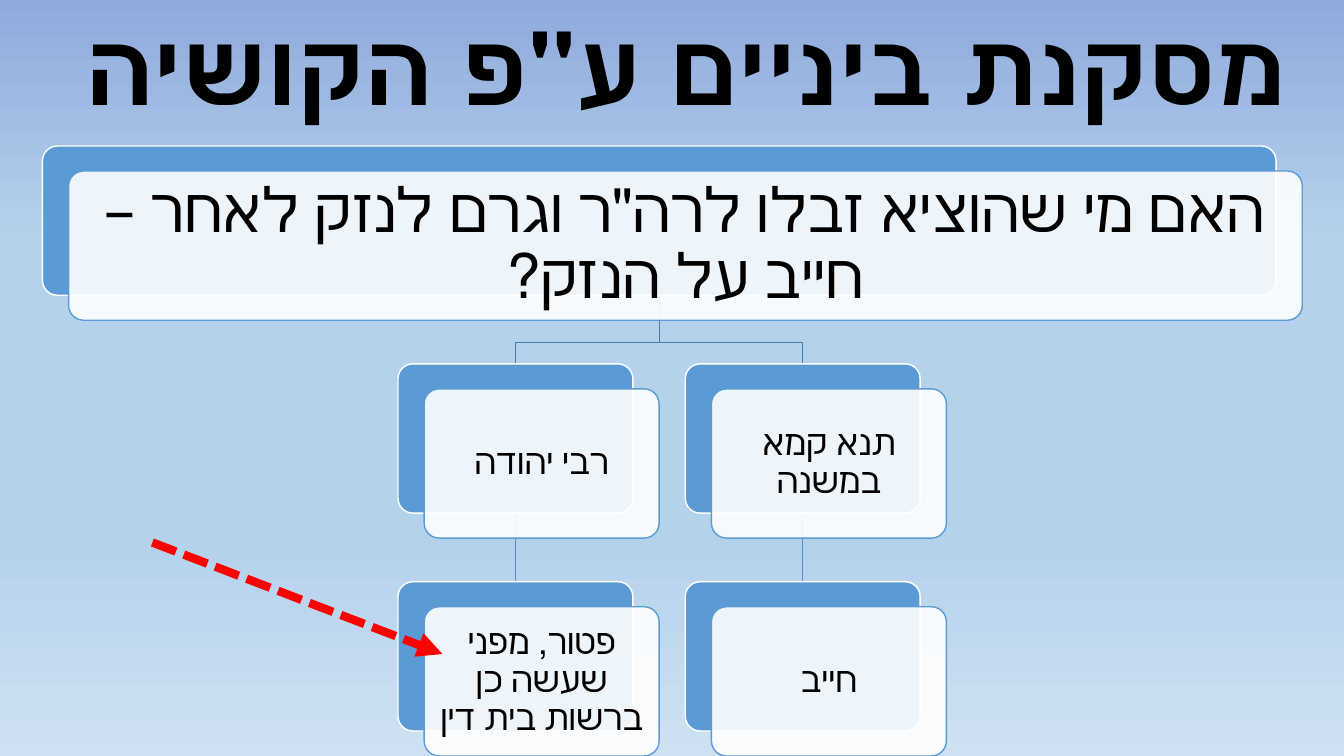
from lxml import etree
from pptx import Presentation
from pptx.dml.color import RGBColor
from pptx.enum.dml import MSO_LINE
from pptx.enum.shapes import MSO_CONNECTOR, MSO_SHAPE
from pptx.enum.text import MSO_ANCHOR, PP_ALIGN
from pptx.oxml.ns import qn
from pptx.util import Cm, Pt

ROUNDED = MSO_SHAPE.ROUNDED_RECTANGLE
STRAIGHT = MSO_CONNECTOR.STRAIGHT
DASHED = MSO_LINE.SQUARE_DOT
MIDDLE = MSO_ANCHOR.MIDDLE
CENTER = PP_ALIGN.CENTER

BLACK = RGBColor(0x00, 0x00, 0x00)
WHITE = RGBColor(0xFF, 0xFF, 0xFF)
BLUE = RGBColor(0x5B, 0x9B, 0xD5)
TRUNK_BLUE = RGBColor(0x49, 0x7C, 0xAB)
BRANCH_BLUE = RGBColor(0x53, 0x8D, 0xC1)
RED = RGBColor(0xFF, 0x00, 0x00)
SKY = [(0, RGBColor(0x8F, 0xAA, 0xDC)), (32, RGBColor(0xB5, 0xD2, 0xEC)),
       (72, RGBColor(0xB5, 0xD2, 0xEC)), (100, RGBColor(0xCE, 0xE1, 0xF2))]

# Tree geometry in centimetres
SLIDE_W, SLIDE_H = 33.87, 19.05
TREE_TOP, ROW_STEP, CARD_H = 3.68, 5.49, 3.76
ROOT_LEFT, ROOT_W = 1.07, 31.09
COLUMN_LEFT, COLUMN_STEP, CARD_W = 10.03, 7.24, 5.92
SHIFT_X, SHIFT_Y = 0.66, 0.63
ELBOW_Y = 8.63

QUESTION = "האם מי שהוציא זבלו לרה\"ר וגרם לנזק לאחר – חייב על הנזק?"
OPINIONS = [
    ("רבי יהודה", "פטור, מפני שעשה כן ברשות בית דין "),
    ("תנא קמא במשנה", "חייב"),
]


def write_text(shape, text, size, font="Calibri", bold=False, margins=(0.25, 0.25)):
    """Fill a shape with one centred right-to-left paragraph."""
    frame = shape.text_frame
    frame.word_wrap = True
    frame.vertical_anchor = MIDDLE
    frame.margin_left = frame.margin_right = Cm(margins[0])
    frame.margin_top = frame.margin_bottom = Cm(margins[1])
    paragraph = frame.paragraphs[0]
    paragraph.alignment = CENTER
    paragraph.line_spacing = 0.9
    paragraph._p.get_or_add_pPr().set("rtl", "1")
    run = paragraph.add_run()
    run.text = text
    run.font.size = Pt(size)
    run.font.name = font
    run.font.bold = bold
    run.font.color.rgb = BLACK


class TreeSlide:
    def __init__(self, slide):
        self.slide = slide
        self.shapes = slide.shapes

    def background(self, stops):
        fill = self.slide.background.fill
        fill.gradient()
        fill.gradient_angle = 270
        stop_list = self.slide.element.find(".//" + qn("a:gsLst"))
        for old_stop in list(stop_list):
            stop_list.remove(old_stop)
        for percent, color in stops:
            stop = etree.SubElement(stop_list, qn("a:gs"), pos=str(percent * 1000))
            etree.SubElement(stop, qn("a:srgbClr"), val=str(color))

    def title(self, text):
        box = self.shapes.add_textbox(0, 0, Cm(SLIDE_W), Cm(TREE_TOP))
        write_text(box, text, 72, font="Lato", bold=True, margins=(0.25, 0.13))

    def branch(self, points, color):
        start, *rest = [(Cm(x), Cm(y)) for x, y in points]
        builder = self.shapes.build_freeform(*start)
        builder.add_line_segments(rest, close=False)
        outline = builder.convert_to_shape()
        outline.shadow.inherit = False
        outline.fill.background()
        outline.line.color.rgb = color
        outline.line.width = Pt(1)

    def panel(self, left, top, width, fill, border):
        panel = self.shapes.add_shape(ROUNDED, Cm(left), Cm(top), Cm(width), Cm(CARD_H))
        panel.adjustments[0] = 0.1
        panel.shadow.inherit = False
        panel.fill.solid()
        panel.fill.fore_color.rgb = fill
        panel.line.color.rgb = border
        panel.line.width = Pt(1)
        return panel

    def card(self, left, top, width, text, size=25, margin=0.25):
        self.panel(left, top, width, BLUE, WHITE)
        front = self.panel(left + SHIFT_X, top + SHIFT_Y, width, WHITE, BLUE)
        color = front.fill._xPr.find(".//" + qn("a:srgbClr"))
        etree.SubElement(color, qn("a:alpha"), val="90000")
        write_text(front, text, size, margins=(margin, margin))

    def arrow(self, x1, y1, x2, y2):
        arrow = self.shapes.add_connector(STRAIGHT, Cm(x1), Cm(y1), Cm(x2), Cm(y2))
        arrow.line.color.rgb = RED
        arrow.line.width = Pt(6)
        arrow.line.dash_style = DASHED
        etree.SubElement(arrow.line._get_or_add_ln(), qn("a:tailEnd"), type="triangle")
        etree.SubElement(arrow._element.spPr, qn("a:effectLst"))


def main():
    deck = Presentation()
    deck.slide_width, deck.slide_height = Cm(SLIDE_W), Cm(SLIDE_H)
    tree = TreeSlide(deck.slides.add_slide(deck.slide_layouts[6]))
    tree.background(SKY)
    tree.title("מסקנת ביניים ע\"פ הקושיה ")

    # Branches behind the cards
    opinion_top, ruling_top = (TREE_TOP + row * ROW_STEP for row in (1, 2))
    column_lefts = [COLUMN_LEFT + i * COLUMN_STEP for i in range(len(OPINIONS))]
    root_x = ROOT_LEFT + ROOT_W / 2
    for left in column_lefts:
        x = left + CARD_W / 2
        tree.branch([(x, opinion_top + CARD_H), (x, ruling_top)], BRANCH_BLUE)
        tree.branch([(root_x, TREE_TOP + CARD_H), (root_x, ELBOW_Y),
                     (x, ELBOW_Y), (x, opinion_top)], TRUNK_BLUE)

    # Question, opinions and rulings
    tree.card(ROOT_LEFT, TREE_TOP, ROOT_W, QUESTION, size=44, margin=0.45)
    for left, (opinion, ruling) in zip(column_lefts, OPINIONS):
        tree.card(left, opinion_top, CARD_W, opinion)
        tree.card(left, ruling_top, CARD_W, ruling)

    # Pointer to the exempting ruling
    tree.arrow(3.84, 13.67, 11.15, 16.48)
    deck.save("out.pptx")


if __name__ == "__main__":
    main()
